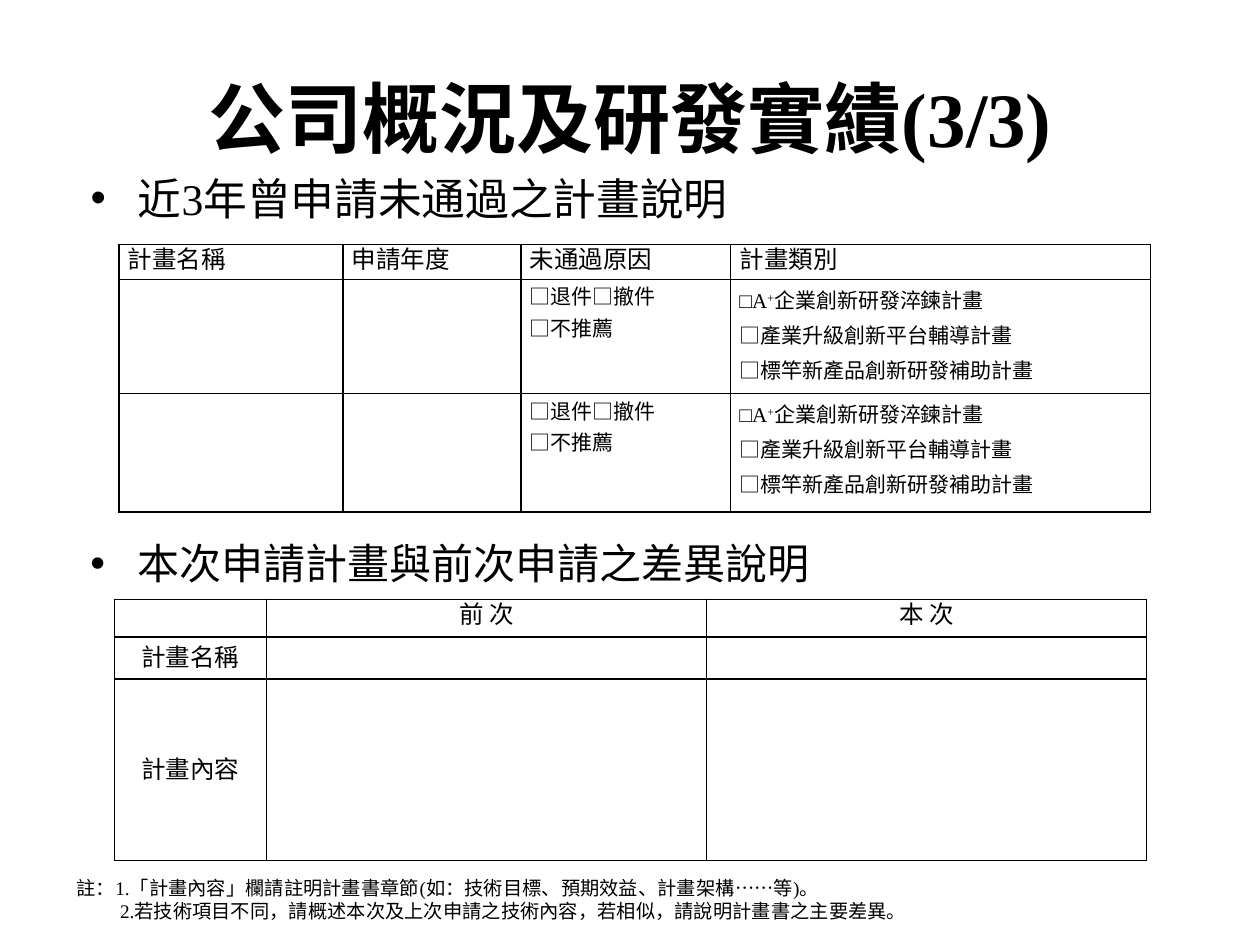
from lxml.etree import SubElement as Sub
from pptx import Presentation
from pptx.dml.color import RGBColor as Rgb
from pptx.enum.text import MSO_ANCHOR as Anc, MSO_AUTO_SIZE as Auto, PP_ALIGN as Al
from pptx.oxml.ns import qn
from pptx.util import Pt

HUE = {"ink": "000000", "page": "FFFFFF"}
TNR, CJK, SANS = "Times New Roman", "Noto Sans CJK SC", "Arial"

TITLE = "公司概況及研發實績(3/3)"
HEADS = ["近3年曾申請未通過之計畫說明", "本次申請計畫與前次申請之差異說明"]

WHY = ["□退件□撤件", "□不推薦"]
KINDS = [
    [("□A", 0), ("+", 30), ("企業創新研發淬鍊計畫", 0)],
    "□產業升級創新平台輔導計畫",
    "□標竿新產品創新研發補助計畫",
]
PAST = [
    [["計畫名稱"], ["申請年度"], ["未通過原因"], ["計畫類別"]],
    [[], [], WHY, KINDS],
    [[], [], WHY, KINDS],
]
DIFF = [
    [[], ["前 次"], ["本 次"]],
    [["計畫名稱"], [], []],
    [["計畫內容"], [], []],
]
NOTES = [
    [("註：", CJK), ("1.", TNR), ("「計畫內容」欄請註明計畫書章節", CJK),
     ("(", TNR), ("如：技術目標、預期效益、計畫架構", CJK), ("……", SANS),
     ("等", CJK), (")", TNR), ("。", CJK)],
    [("2.", TNR),
     ("若技術項目不同，請概述本次及上次申請之技術內容，若相似，請說明計畫書之主要差異。", CJK)],
]


def place(box, x, y, w, h):
    box.left, box.top, box.width, box.height = Pt(x), Pt(y), Pt(w), Pt(h)


def add_run(para, text, size, face=TNR, bold=False, base=0):
    run = para.add_run()
    run.text = text
    font = run.font
    font.size, font.name, font.bold = Pt(size), face, bold
    font.color.rgb = Rgb.from_string(HUE["ink"])
    props = font._element
    Sub(props, qn("a:ea")).set("typeface", CJK)
    if base:
        props.set("baseline", str(base * 1000))


def indent(para, left, first):
    props = para._p.get_or_add_pPr()
    props.set("marL", str(Pt(left)))
    props.set("indent", str(Pt(first)))
    return props


def add_head(box, text, size):
    frame = box.text_frame
    frame.word_wrap = True
    para = frame.paragraphs[0]
    props = indent(para, 27, -27)
    gap = Sub(props, qn("a:spcBef"))
    Sub(gap, qn("a:spcPct")).set("val", "20000")
    Sub(props, qn("a:buFont")).set("typeface", SANS)
    Sub(props, qn("a:buChar")).set("char", "•")
    add_run(para, text, size)


def edge(cell):
    props = cell._tc.get_or_add_tcPr()
    for side in ("lnL", "lnR", "lnT", "lnB"):
        line = Sub(props, qn("a:" + side), w=str(Pt(1)))
        fill = Sub(line, qn("a:solidFill"))
        Sub(fill, qn("a:srgbClr")).set("val", HUE["ink"])


def add_grid(slide, rows, spot, cols, highs, pad, style):
    frame = slide.shapes.add_table(len(rows), len(cols), Pt(spot[0]), Pt(spot[1]),
                                   Pt(sum(cols)), Pt(sum(highs)))
    grid = frame.table
    grid.first_row = grid.horz_banding = False
    for col, wide in zip(grid.columns, cols):
        col.width = Pt(wide)
    for row, high in zip(grid.rows, highs):
        row.height = Pt(high)
    for r, row in enumerate(rows):
        for c, lines in enumerate(row):
            cell = grid.cell(r, c)
            edge(cell)
            cell.fill.background()
            cell.margin_left = cell.margin_right = Pt(pad)
            cell.margin_top = cell.margin_bottom = 0
            align, lead, size, anchor = style(r, c)
            cell.vertical_anchor = anchor
            frame = cell.text_frame
            for i, line in enumerate(lines or [""]):
                para = frame.add_paragraph() if i else frame.paragraphs[0]
                para.alignment, para.line_spacing = align, Pt(lead)
                parts = [(line, 0)] if isinstance(line, str) else line
                for text, base in parts:
                    if text:
                        add_run(para, text, size, base=base)


def past_style(r, c):
    if r and c == 3:
        return Al.LEFT, 20, 12, Anc.TOP
    return Al.JUSTIFY, 18, 12 if r else 14, Anc.TOP


def diff_style(r, c):
    return Al.CENTER, 18, 14, Anc.MIDDLE if r and c == 0 else Anc.TOP


def main():
    deck = Presentation()
    deck.slide_width, deck.slide_height = Pt(720), Pt(540)
    slide = deck.slides.add_slide(deck.slide_layouts[1])
    slide.background.fill.solid()
    slide.background.fill.fore_color.rgb = Rgb.from_string(HUE["page"])

    title, body = slide.placeholders
    place(title, 36, 21.6, 648, 90)
    title.text_frame.vertical_anchor = Anc.MIDDLE
    para = title.text_frame.paragraphs[0]
    para.alignment = Al.CENTER
    add_run(para, TITLE, 44, bold=True)

    place(body, 44.6, 94.3, 648, 266.4)
    add_head(body, HEADS[0], 25)
    box = slide.shapes.add_textbox(Pt(44.6), Pt(303.8), Pt(648), Pt(222.5))
    add_head(box, HEADS[1], 24)

    add_grid(slide, PAST, (68, 139.7), [128, 101.6, 120, 240],
             [20, 65.3, 67.7], 5, past_style)
    add_grid(slide, DIFF, (65.3, 342.5), [87, 251.4, 251.4],
             [18, 24, 103.5], 1.5, diff_style)

    note = slide.shapes.add_textbox(Pt(36.7), Pt(496.8), Pt(494), Pt(33.8))
    frame = note.text_frame
    frame.word_wrap, frame.auto_size = False, Auto.SHAPE_TO_FIT_TEXT
    frame.vertical_anchor = Anc.MIDDLE
    for i, parts in enumerate(NOTES):
        para = frame.add_paragraph() if i else frame.paragraphs[0]
        indent(para, 24.8, 0 if i else -24.8)
        for text, face in parts:
            add_run(para, text, 11, face)

    deck.save("out.pptx")


if __name__ == "__main__":
    main()
